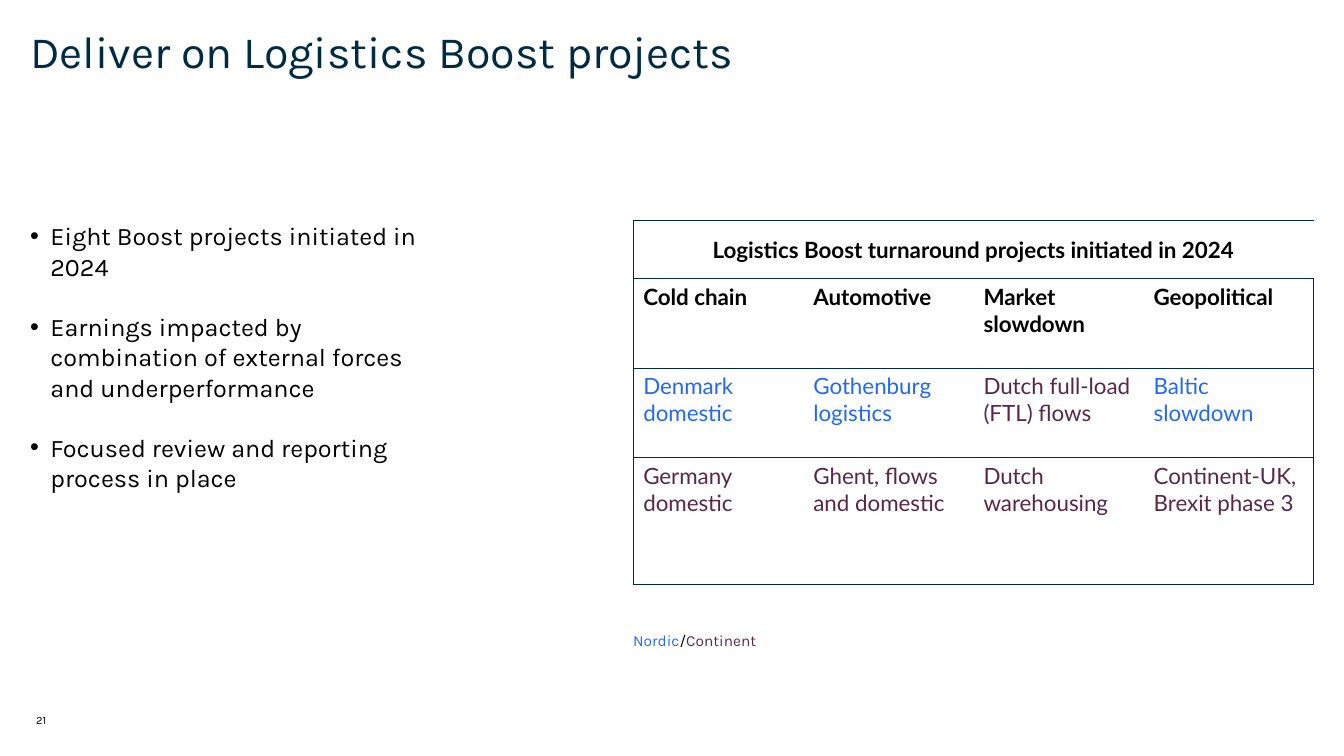
"""Build the slide on Logistics Boost projects."""
from dataclasses import dataclass
from typing import NamedTuple

from lxml import etree
from pptx import Presentation
from pptx import util as u
from pptx.dml.color import RGBColor
from pptx.enum import text as t
from pptx.oxml import ns

PX = 9144


@dataclass(frozen=True)
class Theme:
    """Fonts, colours and type sizes."""
    sans: str = "Karla"
    grid: str = "Lato"
    navy: str = "002B45"
    black: str = "000000"
    nordic: str = "2369F5"
    inland: str = "5A2846"
    title: int = 32
    body: int = 18
    cell: int = 16
    key: int = 11
    foot: int = 8


class Box(NamedTuple):
    """Left, top, width and height in px."""
    x: int
    y: int
    w: int
    h: int


class Entry(NamedTuple):
    """Text with its colour."""
    text: str
    tint: str


THEME = Theme()
HEADING = "Logistics Boost turnaround projects initiated in 2024"
CAUSES = ("Cold chain", "Automotive", "Market slowdown", "Geopolitical")
PROJECTS = (
    (Entry("Denmark domestic", THEME.nordic), Entry("Gothenburg logistics", THEME.nordic),
     Entry("Dutch full-load (FTL) flows", THEME.inland), Entry("Baltic slowdown", THEME.nordic)),
    tuple(Entry(name, THEME.inland) for name in (
        "Germany domestic", "Ghent, flows and domestic",
        "Dutch warehousing", "Continent-UK, Brexit phase 3")),
)
HEIGHTS = (57, 89, 89, 126)
POINTS = (
    "Eight Boost projects initiated in 2024",
    "Earnings impacted by combination of external forces and underperformance",
    "Focused review and reporting process in place",
)
KEY = (Entry("Nordic", THEME.nordic), Entry("/", THEME.black), Entry("Continent", THEME.inland))


def style(font, name: str, size: int, tint: str, bold: bool = False) -> None:
    """Set the look of a font."""
    font.name, font.size, font.bold = name, u.Pt(size), bold
    font.color.rgb = RGBColor.from_string(tint)


def add_box(slide, box: Box, inset: tuple[int, int] = (0, 0), wrap: bool = True):
    """Add a text box and return its frame."""
    frame = slide.shapes.add_textbox(*(n * PX for n in box)).text_frame
    frame.word_wrap = wrap
    frame.margin_left = frame.margin_right = inset[0] * PX
    frame.margin_top = frame.margin_bottom = inset[1] * PX
    return frame


def add_line(slide, box: Box, words: str, size: int, tint: str,
             inset: tuple[int, int] = (0, 0)):
    """Add a one-line text box and return its paragraph."""
    para = add_box(slide, box, inset).paragraphs[0]
    para.text = words
    style(para.font, THEME.sans, size, tint)
    return para


def add_points(slide, box: Box) -> None:
    """Add the bullet list."""
    frame = add_box(slide, box)
    for i, point in enumerate(POINTS):
        para = frame.paragraphs[0] if i == 0 else frame.add_paragraph()
        para.text = point
        props = para._p.get_or_add_pPr()
        props.set("marL", str(20 * PX))
        props.set("indent", str(-20 * PX))
        if i:
            para.space_before = u.Pt(21.5)
        etree.SubElement(props, ns.qn("a:buFont"), typeface="Arial")
        etree.SubElement(props, ns.qn("a:buChar"), char="•")
        style(para.font, THEME.sans, THEME.body, THEME.black)


def set_edges(cell, sides: str) -> None:
    """Rule the given sides of a cell and clear the others."""
    props = cell._tc.get_or_add_tcPr()
    for i, side in enumerate("LRTB"):
        line = etree.Element(ns.qn(f"a:ln{side}"), w=str(u.Pt(0.5)))
        if side in sides:
            fill = etree.SubElement(line, ns.qn("a:solidFill"))
            etree.SubElement(fill, ns.qn("a:srgbClr"), val=THEME.navy)
        else:
            etree.SubElement(line, ns.qn("a:noFill"))
        props.insert(i, line)


def add_grid(slide, box: Box) -> None:
    """Add the table of projects."""
    blank = Entry("", THEME.black)
    rows = ((Entry(HEADING, THEME.black),) + (blank,) * 3,
            tuple(Entry(cause, THEME.black) for cause in CAUSES), *PROJECTS)
    last = len(CAUSES) - 1
    table = slide.shapes.add_table(len(rows), len(CAUSES), *(n * PX for n in box)).table
    table.first_row = table.horz_banding = False
    for r, row in enumerate(rows):
        table.rows[r].height = HEIGHTS[r] * PX
        for c, entry in enumerate(row):
            cell = table.cell(r, c)
            cell.fill.background()
            set_edges(cell, "TB" + "L" * (c == 0) + "R" * (c == last))
            para = cell.text_frame.paragraphs[0]
            para.text = entry.text
            style(para.font, THEME.grid, THEME.cell, entry.tint, r < 2)
    head = table.cell(0, 0)
    head.merge(table.cell(0, last))
    set_edges_mid = head.text_frame.paragraphs[0]
    set_edges_mid.alignment = t.PP_ALIGN.CENTER
    head.vertical_anchor = t.MSO_ANCHOR.MIDDLE


def add_key(slide, box: Box) -> None:
    """Add the colour key."""
    para = add_box(slide, box, wrap=False).paragraphs[0]
    for entry in KEY:
        run = para.add_run()
        run.text = entry.text
        style(run.font, THEME.sans, THEME.key, entry.tint)


def main() -> None:
    """Build and save the deck."""
    deck = Presentation()
    deck.slide_width, deck.slide_height = 1333 * PX, 750 * PX
    slide = deck.slides.add_slide(deck.slide_layouts[6])
    title = add_line(slide, Box(30, 30, 963, 86), "Deliver on Logistics Boost projects",
                     THEME.title, THEME.navy)
    title.line_spacing = 0.9
    add_points(slide, Box(30, 219, 411, 429))
    add_line(slide, Box(26, 703, 35, 20), "21", THEME.foot, THEME.black, (10, 5))
    add_grid(slide, Box(628, 219, 675, sum(HEIGHTS)))
    add_key(slide, Box(628, 626, 129, 19))
    deck.save("out.pptx")


if __name__ == "__main__":
    main()
